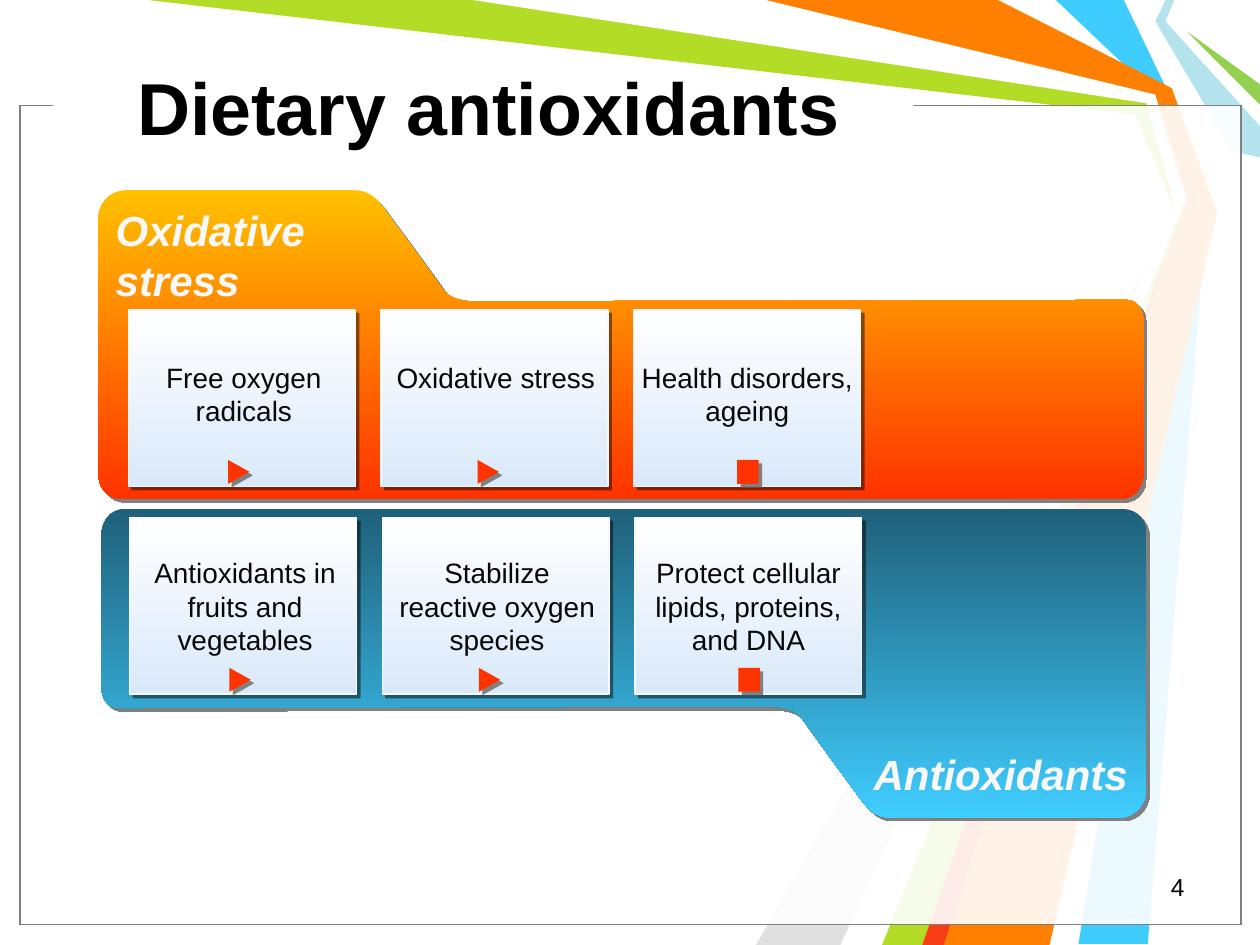
"""Build the "Dietary antioxidants" slide with two folder panels of cards."""
import lxml.etree
import pptx
import pptx.dml.color
import pptx.enum.shapes
import pptx.enum.text
import pptx.oxml.ns
import pptx.util

RGBColor = pptx.dml.color.RGBColor
Shape = pptx.enum.shapes.MSO_SHAPE
Align = pptx.enum.text.PP_ALIGN
Anchor = pptx.enum.text.MSO_ANCHOR

BLACK = RGBColor(0x00, 0x00, 0x00)
WHITE = RGBColor(0xFF, 0xFF, 0xFF)
INK = RGBColor(0x08, 0x08, 0x08)
PALE = RGBColor(0xF8, 0xF8, 0xF8)
GRAY = RGBColor(0x80, 0x80, 0x80)
SILVER = RGBColor(0xE0, 0xE0, 0xE0)
SKY = RGBColor(0x3F, 0xCD, 0xFF)
TEAL = RGBColor(0x1F, 0x60, 0x79)
LIME = RGBColor(0xB3, 0xDC, 0x27)
ICE = RGBColor(0xB4, 0xE3, 0xEE)
LEAF = RGBColor(0x92, 0xD0, 0x50)
ORANGE = RGBColor(0xFF, 0x7F, 0x00)
AMBER = RGBColor(0xFF, 0xC0, 0x00)
RED = RGBColor(0xFF, 0x33, 0x00)
SCARLET = RGBColor(0xF9, 0x3D, 0x17)
CARD_BLUE = RGBColor(0xDA, 0xE9, 0xFA)

RIBBONS = [
    (SKY, [(8.92, 0), (9.29, 0.77), (9.58, 1.67), (9.11, 7.49), (8.56, 7.49),
           (9.5, 1.67), (9.17, 0.75), (8.38, 0)]),
    (LIME, [(1.17, 0), (3.83, 0), (9.14, 0.78), (9.42, 1.69), (7.42, 7.5),
            (6.92, 7.5), (9.35, 1.73), (9.01, 0.91)]),
    (SILVER, [(6.67, 7.5), (9.27, 1.81), (6, 7.5)]),
    (WHITE, [(3.75, 0), (9.1, 0.82), (9.32, 1.62), (6.75, 7.5), (7, 7.5),
             (9.41, 1.58), (9.17, 0.75), (6, 0)]),
    (ICE, [(9.25, 0), (9.17, 0.17), (9.78, 1.2), (10, 1.25), (10, 1),
           (9.25, 0.17), (9.32, 0)]),
    (LEAF, [(10, 0.83), (9.42, 0.25), (10, 0.67)]),
    (ORANGE, [(6.08, 0), (7.92, 0), (9.3, 0.7), (9.66, 1.69), (8.33, 7.5),
              (7.33, 7.5), (9.42, 1.58), (9.17, 0.75)]),
    (SCARLET, [(7.32, 7.5), (9.32, 1.83), (7.49, 7.5)]),
]

FOLDER_START = (8.94, 2.38)
FOLDER_CURVES = [
    ((6.33, 2.39), (3.72, 2.39), (3.72, 2.39)),
    ((3.63, 2.38), (3.56, 2.36), (3.51, 2.29)),
    ((3.31, 2.01), (3.11, 1.74), (3.11, 1.74)),
    ((3.04, 1.65), (2.97, 1.5), (2.8, 1.51)),
    ((1.9, 1.51), (1, 1.51), (1, 1.51)),
    ((0.86, 1.51), (0.77, 1.63), (0.78, 1.77)),
    ((0.78, 2.76), (0.78, 3.73), (0.78, 3.73)),
    ((0.77, 3.99), (1, 3.96), (1, 3.96)),
    ((4.93, 3.96), (8.86, 3.96), (8.86, 3.96)),
    ((8.86, 3.96), (9.09, 4), (9.08, 3.69)),
    ((9.08, 3.14), (9.08, 2.59), (9.08, 2.59)),
    ((9.08, 2.59), (9.09, 2.38), (8.94, 2.38)),
]

COLUMNS = [(1.04, 1.79, 1.8, Shape.ISOSCELES_TRIANGLE),
           (3.04, 1.79, 3.78, Shape.ISOSCELES_TRIANGLE),
           (4.99, 1.88, 5.84, Shape.RECTANGLE)]
STRESS_STEPS = ["Free oxygen radicals", "Oxidative stress", "Health disorders, ageing"]
DEFENCE_STEPS = ["Antioxidants in fruits and vegetables",
                 "Stabilize reactive oxygen species",
                 "Protect cellular lipids, proteins, and DNA"]


def inches(*values):
    """Return the lengths, given in inches, as Cm lengths."""
    return [pptx.util.Cm(value * 2.54) for value in values]


def add_shadow(effects, color, opacity=100):
    """Put an offset shadow into an effect list."""
    shadow = lxml.etree.SubElement(
        effects, pptx.oxml.ns.qn("a:outerShdw"), dist=str(pptx.util.Pt(2.8)),
        dir="2700000", algn="ctr", rotWithShape="0")
    tone = lxml.etree.SubElement(shadow, pptx.oxml.ns.qn("a:srgbClr"), val=str(color))
    lxml.etree.SubElement(tone, pptx.oxml.ns.qn("a:alpha"), val=str(opacity * 1000))


def paint(shape, colors, line=None, shadow=None):
    """Fill a shape with one color or a downward gradient, then set line and shadow."""
    if len(colors) == 1:
        shape.fill.solid()
        shape.fill.fore_color.rgb = colors[0]
    else:
        shape.fill.gradient()
        shape.fill.gradient_angle = 270
        for stop, color, position in zip(shape.fill.gradient_stops, colors, (0, 1)):
            stop.color.rgb = color
            stop.position = position
    if line is None:
        shape.line.fill.background()
    else:
        shape.line.color.rgb = line
        shape.line.width = pptx.util.Pt(0.75)
    shape.shadow.inherit = False
    if shadow:
        add_shadow(shape.element.spPr.find(pptx.oxml.ns.qn("a:effectLst")), *shadow)


def add_outline(page, points, colors, shadow=None):
    """Draw a closed outline through the points."""
    corners = [inches(*point) for point in points]
    builder = page.shapes.build_freeform(*corners[0], scale=1.0)
    builder.add_line_segments(corners[1:], close=True)
    paint(builder.convert_to_shape(), colors, shadow=shadow)


def add_block(page, kind, place, colors, line=None, shadow=None):
    """Draw a preset shape and return it."""
    shape = page.shapes.add_shape(kind, *inches(*place))
    paint(shape, colors, line, shadow)
    return shape


def add_text(page, text, place, size, color=INK, align=Align.LEFT, anchor=Anchor.TOP,
             bold=False, italic=False, shadow=False):
    """Write one paragraph in a wrapping box."""
    frame = page.shapes.add_textbox(*inches(*place)).text_frame
    frame.word_wrap = True
    frame.vertical_anchor = anchor
    para = frame.paragraphs[0]
    para.alignment = align
    span = para.add_run()
    span.text = text
    span.font.size = pptx.util.Pt(size)
    span.font.bold = bold
    span.font.italic = italic
    span.font.color.rgb = color
    if shadow:
        properties = span.font.fill._xPr
        add_shadow(lxml.etree.SubElement(properties, pptx.oxml.ns.qn("a:effectLst")), BLACK)
    span.font.name = "Arial"


def add_frame(page, line):
    """Draw a translucent white page frame."""
    frame = add_block(page, Shape.RECTANGLE, (0.16, 0.84, 9.69, 6.5), [WHITE], line)
    tone = frame.element.spPr.find(".//" + pptx.oxml.ns.qn("a:srgbClr"))
    lxml.etree.SubElement(tone, pptx.oxml.ns.qn("a:alpha"), val="69000")


def folder_points(steps=10):
    """Return points along the curved outline of the upper folder."""
    points = [FOLDER_START]
    for first, second, end in FOLDER_CURVES:
        start = points[-1]
        for step in range(1, steps + 1):
            t = step / steps
            weights = ((1 - t) ** 3, 3 * t * (1 - t) ** 2, 3 * t * t * (1 - t), t ** 3)
            points.append(tuple(
                sum(weight * value for weight, value in zip(weights, values))
                for values in zip(start, first, second, end)))
    return points


def add_cards(page, labels, shift, drop, text_top, text_height):
    """Draw a row of cards, each with its label and a red marker."""
    for index, (label, column) in enumerate(zip(labels, COLUMNS)):
        text_left, text_width, mark_left, mark_kind = column
        add_block(page, Shape.RECTANGLE, (1.02 + shift + 2.005 * index, 2.46 + drop, 1.8, 1.4),
                  [WHITE, CARD_BLUE], PALE, (INK, 50))
        add_text(page, label, (text_left + shift, text_top, text_width, text_height), 16,
                 align=Align.CENTER)
        mark = add_block(page, mark_kind, (mark_left + shift, 3.66 + drop, 0.19, 0.17),
                         [RED], shadow=(GRAY,))
        mark.rotation = 90


def main():
    """Build and save the slide."""
    deck = pptx.Presentation()
    deck.slide_width, deck.slide_height = inches(10, 7.5)
    page = deck.slides.add_slide(deck.slide_layouts[6])
    for color, points in RIBBONS:
        add_outline(page, points, [color])
    for line in (BLACK, GRAY):
        add_frame(page, line)
    add_block(page, Shape.RECTANGLE, (0.42, 0.74, 6.83, 0.17), [WHITE])
    add_text(page, "Dietary antioxidants", (0.99, 0.22, 6.89, 1.25), 42, BLACK,
             anchor=Anchor.MIDDLE, bold=True)
    upper = folder_points()
    lower = [(9.88 - x, 8 - y) for x, y in upper]
    add_outline(page, lower, [TEAL, SKY], (GRAY,))
    add_outline(page, upper, [AMBER, RED], (GRAY,))
    add_cards(page, STRESS_STEPS, 0, 0, 2.81, 0.64)
    add_cards(page, DEFENCE_STEPS, 0.01, 1.65, 4.36, 0.91)
    add_text(page, "Oxidative stress", (0.82, 1.57, 2.43, 0.91), 24, PALE,
             bold=True, italic=True, shadow=True)
    add_text(page, "Antioxidants", (6.62, 5.89, 2.43, 0.5), 24, PALE, Align.RIGHT,
             bold=True, italic=True, shadow=True)
    add_text(page, "4", (7.17, 6.87, 2.33, 0.33), 14, BLACK, Align.RIGHT)
    deck.save("out.pptx")


if __name__ == "__main__":
    main()
